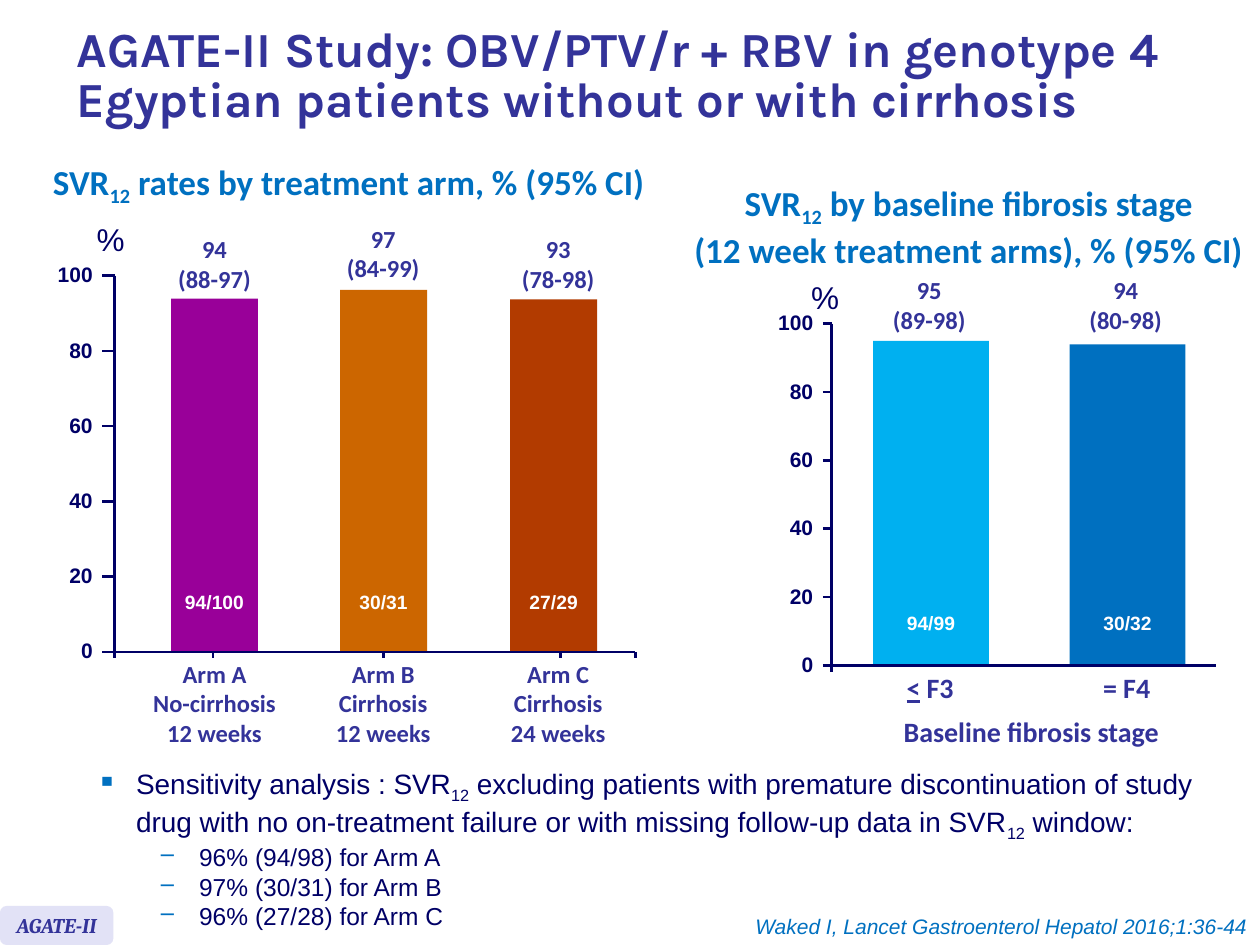
from lxml import etree
from pptx import Presentation
from pptx import util as u
from pptx.dml.color import RGBColor
from pptx.enum import shapes, text
from pptx.oxml.ns import qn

COLORS = {
    "indigo": "333399", "navy": "000066", "blue": "0070C0", "sky": "00B0F0",
    "purple": "990099", "orange": "CC6600", "rust": "B23B00",
    "white": "FFFFFF", "lavender": "E2E2F6",
}
ALIGN = {"l": text.PP_ALIGN.LEFT, "c": text.PP_ALIGN.CENTER, "r": text.PP_ALIGN.RIGHT}
TITLE = dict(name="Karla", size=28, bold=True, color="indigo")
HEADING = dict(name="Calibri", size=20, bold=True, color="blue")
LABEL = dict(name="Calibri", size=14, bold=True, color="indigo")
STAGE = dict(LABEL, size=16)
SCALE = dict(name="Arial", size=12, bold=True, color="navy")
PERCENT = dict(name="Arial", size=18, color="navy")
COUNT = dict(name="Arial", size=11, bold=True, color="white")
BODY = dict(name="Arial", size=16, color="navy")
SUBITEM = dict(BODY, size=14)
BADGE = dict(name="Cambria", size=12, bold=True, italic=True, color="indigo")
CITATION = dict(name="Arial", size=12, italic=True, color="blue")
SVR = ["SVR", ("12", "sub")]


class Deck:
    def __init__(self, width, height):
        self.prs = Presentation()
        self.prs.slide_width, self.prs.slide_height = u.Pt(width), u.Pt(height)
        self.slide = self.prs.slides.add_slide(self.prs.slide_layouts[5])

    def rgb(self, color):
        return RGBColor.from_string(COLORS[color])

    def runs(self, paragraph, parts, style):
        """Add runs; a part is a string, or (string, "sub" or "underline")."""
        for part in [parts] if isinstance(parts, str) else parts:
            words, mark = (part, None) if isinstance(part, str) else part
            run = paragraph.add_run()
            run.text = words
            for key, value in style.items():
                if key == "color":
                    run.font.color.rgb = self.rgb(value)
                else:
                    setattr(run.font, key, u.Pt(value) if key == "size" else value)
            if mark == "sub":
                run._r.get_or_add_rPr().set("baseline", "-25000")
            elif mark == "underline":
                run.font.underline = True

    def title(self, words, box, style, spacing):
        holder = self.slide.shapes.title
        holder.left, holder.top, holder.width, holder.height = map(u.Pt, box)
        frame = holder.text_frame
        frame.auto_size = text.MSO_AUTO_SIZE.NONE
        frame.vertical_anchor = text.MSO_ANCHOR.MIDDLE
        paragraph = frame.paragraphs[0]
        paragraph.alignment = ALIGN["l"]
        paragraph.line_spacing = spacing
        self.runs(paragraph, words, style)

    def text(self, lines, box, style, align="c", inset=True, spacing=None):
        frame = self.slide.shapes.add_textbox(*map(u.Pt, box)).text_frame
        frame.word_wrap = False
        if not inset:
            for side in ("left", "top", "right", "bottom"):
                setattr(frame, f"margin_{side}", 0)
        for i, line in enumerate(lines):
            paragraph = frame.add_paragraph() if i else frame.paragraphs[0]
            paragraph.alignment = ALIGN[align]
            if spacing:
                paragraph.line_spacing = u.Pt(spacing)
            self.runs(paragraph, line, style)

    def bullets(self, items, box):
        """Each item is (level, indent, bullet, parts, style)."""
        frame = self.slide.shapes.add_textbox(*map(u.Pt, box)).text_frame
        frame.word_wrap = True
        for i, (level, indent, mark, parts, style) in enumerate(items):
            paragraph = frame.add_paragraph() if i else frame.paragraphs[0]
            paragraph.level = level
            props = paragraph._p.get_or_add_pPr()
            props.set("marL", str(u.Pt(indent)))
            props.set("indent", str(u.Pt(-22.5)))
            color = etree.SubElement(props, qn("a:buClr"))
            etree.SubElement(color, qn("a:srgbClr"), val=COLORS["blue"])
            etree.SubElement(props, qn("a:buChar"), char=mark)
            self.runs(paragraph, parts, style)

    def block(self, box, color, kind=shapes.MSO_SHAPE.RECTANGLE):
        shape = self.slide.shapes.add_shape(kind, *map(u.Pt, box))
        shape.shadow.inherit = False
        shape.fill.solid()
        shape.fill.fore_color.rgb = self.rgb(color)
        shape.line.fill.background()
        return shape

    def badge(self, words, box):
        frame = self.block(box, "lavender", shapes.MSO_SHAPE.ROUNDED_RECTANGLE).text_frame
        frame.word_wrap = False
        frame.vertical_anchor = text.MSO_ANCHOR.MIDDLE
        frame.paragraphs[0].alignment = ALIGN["c"]
        self.runs(frame.paragraphs[0], words, BADGE)

    def line(self, x1, y1, x2, y2):
        line = self.slide.shapes.add_connector(
            shapes.MSO_CONNECTOR.STRAIGHT, *map(u.Pt, (x1, y1, x2, y2)))
        line.line.color.rgb = self.rgb("navy")
        line.line.width = u.Pt(1.5)
        etree.SubElement(line._element.spPr, qn("a:effectLst"))

    def axes(self, left, top, right, base, tick, marks):
        """Draw a 0-100 scale and a base line with tick marks below it."""
        self.line(left, top, left, base)
        self.line(left, base, right, base)
        for value in range(0, 101, 20):
            y = base - (base - top) * value / 100
            self.line(left - tick, y, left, y)
            self.text([str(value)], (left - tick - 25.5, y - 7.9, 20, 14.4),
                      SCALE, "r", inset=False)
        for x in marks:
            self.line(x, base, x, base + 3.6)

    def bar(self, center, width, base, height, color, count, count_rise):
        self.block((center - width / 2, base - height, width, height), color)
        self.text([count], (center - 24, base - count_rise, 48, 20.9), COUNT)


def arms_chart(deck):
    left, top, right, base = 65.5, 157.5, 363, 372.5
    # bar centre, label centre, bar height in %, label top, colour, texts
    arms = [
        (122.6, 122.6, 93.9, 134, "purple", "94/100", ["94", "(88-97)"],
         ["Arm A", "No-cirrhosis", "12 weeks"]),
        (219.2, 219, 96.2, 128, "orange", "30/31", ["97", "(84-99)"],
         ["Arm B", "Cirrhosis", "12 weeks"]),
        (316.4, 319, 93.7, 134, "rust", "27/29", ["93", "(78-98)"],
         ["Arm C", "Cirrhosis", "24 weeks"]),
    ]
    deck.text([SVR + [" rates by treatment arm, % (95% CI)"]],
              (20, 100, 358.5, 24.5), HEADING, spacing=15.2)
    deck.text(["%"], (48.2, 122.4, 31, 29), PERCENT, "l")
    for center, middle, percent, label_top, color, count, rate, arm in arms:
        deck.bar(center, 49.7, base, (base - top) * percent / 100, color, count, 39)
        deck.text(rate, (middle - 21, label_top, 42, 34), LABEL, inset=False)
        deck.text(arm, (middle - 43, base + 0.5, 86, 58), LABEL)
    deck.axes(left, top, right, base, 7, [left, 121.7, 219, 320.4, right])


def fibrosis_chart(deck):
    left, top, right, base = 475.2, 185, 694.8, 380.2
    stages = [
        (532, 95, "sky", "94/99", "(89-98)", [("<", "underline"), " F3"]),
        (644.3, 94, "blue", "30/32", "(80-98)", "= F4"),
    ]
    deck.text([SVR + [" by baseline fibrosis stage"],
               "(12 week treatment arms), % (95% CI)"], (388, 100, 331, 55.5), HEADING)
    deck.text(["%"], (456.5, 155.5, 31, 29), PERCENT, "l")
    for center, percent, color, count, interval, stage in stages:
        deck.bar(center, 66.2, base, (base - top) * percent / 100, color, count, 34.6)
        deck.text([str(percent), interval], (center - 22, 157.4, 42, 34),
                  LABEL, inset=False)
        deck.text([stage], (center - 21.5, base - 0.7, 42, 26.6), STAGE)
    deck.text(["Baseline fibrosis stage"], (508.3, 404.6, 162, 26.6), STAGE)
    deck.axes(left, top, right, base, 5, [left])


def main():
    deck = Deck(720, 540)
    deck.title("AGATE-II Study: OBV/PTV/r + RBV in genotype 4 "
               "Egyptian patients without or with cirrhosis",
               (36.7, 5.8, 657.4, 77), TITLE, 0.85)
    deck.badge("AGATE-II", (0, 517.7, 64.8, 22.3))
    arms_chart(deck)
    fibrosis_chart(deck)
    sensitivity = (["Sensitivity analysis : "] + SVR
                   + [" excluding patients with premature discontinuation of study drug "
                      "with no on-treatment failure or with missing follow-up data in "]
                   + SVR + [" window:"])
    results = ["96% (94/98) for Arm A", "97% (30/31) for Arm B", "96% (27/28) for Arm C"]
    deck.bullets([(0, 22.5, "▪", sensitivity, BODY)]
                 + [(1, 58.5, "‒", result, SUBITEM) for result in results],
                 (48.2, 434.2, 646.6, 97.2))
    deck.text(["Waked I, Lancet Gastroenterol Hepatol 2016;1:36-44"],
              (414.7, 518.2, 305.3, 21.8), CITATION, "r")
    deck.prs.save("out.pptx")


if __name__ == "__main__":
    main()
